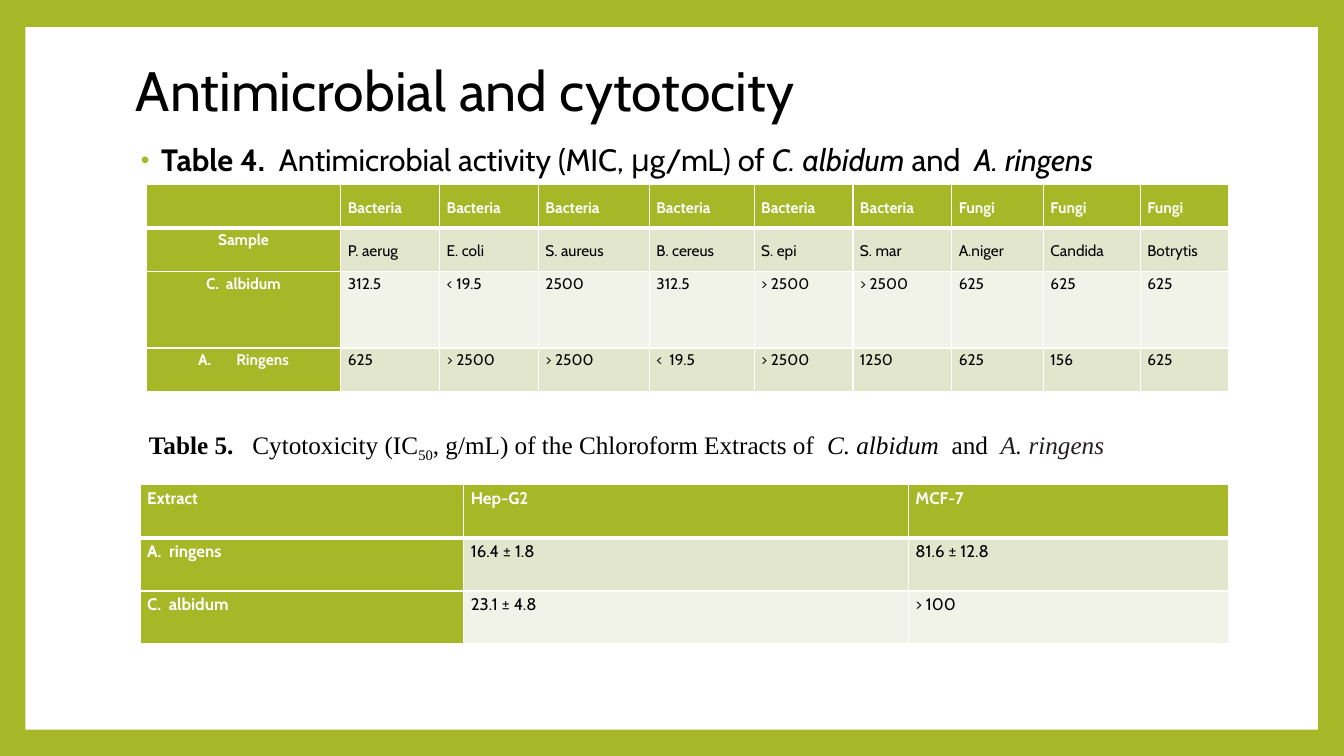
from dataclasses import dataclass

from lxml.etree import SubElement
from pptx import Presentation
from pptx.dml.color import RGBColor
from pptx.enum.shapes import MSO_SHAPE as Shape
from pptx.enum.text import MSO_ANCHOR as Anchor, PP_ALIGN as Align
from pptx.oxml import parse_xml
from pptx.oxml.ns import nsdecls, qn
from pptx.util import Inches, Pt

SLIDE_WIDTH, SLIDE_HEIGHT = Inches(13.33), Inches(7.5)


@dataclass(frozen=True)
class Theme:
    green: str = "A6B727"
    white: str = "FFFFFF"
    black: str = "000000"
    soft_black: str = "231F20"
    bands: tuple = ("E1E6CD", "F1F3E8")
    sans: str = "Cabin"
    serif: str = "Times New Roman"
    title: float = 39.6
    caption: float = 22
    serif_caption: float = 18
    activity: float = 11
    toxicity: float = 12
    thin: float = 1
    thick: float = 3


THEME = Theme()


def share_box(left, top, width, height):
    """Turn percentages of the slide into a box of lengths."""
    return (int(SLIDE_WIDTH * left / 100), int(SLIDE_HEIGHT * top / 100),
            int(SLIDE_WIDTH * width / 100), int(SLIDE_HEIGHT * height / 100))


def split(length, weights):
    return [int(length * weight / sum(weights)) for weight in weights]


def add_span(para, text, *, size, font=THEME.sans, color=THEME.black,
             bold=False, italic=False, baseline=0):
    span = para.add_run()
    span.text = text
    span.font.size, span.font.name = Pt(size), font
    span.font.bold, span.font.italic = bold, italic
    span.font.color.rgb = RGBColor.from_string(color)
    if baseline:
        span.font._element.set("baseline", str(baseline * 1000))


def set_bullet(para, indent, hanging, *marks):
    """Hang the paragraph and append its bullet marks, each a tag and a dict."""
    properties = para._p.get_or_add_pPr()
    properties.set("marL", str(Inches(indent)))
    properties.set("indent", str(-Inches(hanging)))
    return [SubElement(properties, qn(tag), values) for tag, values in marks]


def add_line(page, box, spans, *, line_spacing, anchor=Anchor.TOP, **formats):
    """Place one paragraph of (text, own formats) spans."""
    frame = page.shapes.add_textbox(*box).text_frame
    frame.word_wrap = True
    frame.vertical_anchor = anchor
    para = frame.paragraphs[0]
    para.line_spacing = line_spacing
    for text, own in spans:
        add_span(para, text, **(formats | own))
    return para


def set_borders(cell, top, bottom):
    properties = cell._tc.get_or_add_tcPr()
    widths = {"lnL": THEME.thin, "lnR": THEME.thin, "lnT": top, "lnB": bottom}
    for index, (side, width) in enumerate(widths.items()):
        properties.insert(index, parse_xml(
            f'<a:{side} {nsdecls("a")} w="{Pt(width)}"><a:solidFill>'
            f'<a:srgbClr val="{THEME.white}"/></a:solidFill></a:{side}>'))


def add_banded_table(page, box, rows, *, columns, heights, size,
                     align=Align.LEFT, first_align=Align.LEFT, middle_rows=0):
    """Green header row and first column, banded cells elsewhere."""
    table = page.shapes.add_table(len(rows), len(columns), *box).table
    for column, width in zip(table.columns, split(box[2], columns)):
        column.width = width
    for row, height in zip(table.rows, split(box[3], heights)):
        row.height = height
    for r, texts in enumerate(rows):
        for c, text in enumerate(texts):
            cell = table.cell(r, c)
            heading = r == 0 or c == 0
            set_borders(cell, THEME.thick if r == 1 else THEME.thin,
                        THEME.thick if r == 0 else THEME.thin)
            cell.fill.solid()
            cell.fill.fore_color.rgb = RGBColor.from_string(
                THEME.green if heading else THEME.bands[(r - 1) % 2])
            cell.margin_left = cell.margin_right = Inches(0.07)
            cell.margin_top = cell.margin_bottom = 0
            if c and r < middle_rows:
                cell.vertical_anchor = Anchor.MIDDLE
            para = cell.text_frame.paragraphs[0]
            para.alignment = align if c else first_align
            para.line_spacing = 1.15
            if text:
                add_span(para, text, size=size, bold=heading,
                         color=THEME.white if heading else THEME.black)
    return table


def add_panel(page, box):
    page.background.fill.solid()
    page.background.fill.fore_color.rgb = RGBColor.from_string(THEME.green)
    panel = page.shapes.add_shape(Shape.RECTANGLE, *box)
    panel.shadow.inherit = False
    panel.fill.solid()
    panel.fill.fore_color.rgb = RGBColor.from_string(THEME.white)
    panel.line.fill.background()


def add_activity_caption(page, box):
    para = add_line(page, box, [
        ("Table 4.  ", {"bold": True}),
        ("Antimicrobial activity (MIC, μg/mL) of ", {}),
        ("C. albidum", {"italic": True}),
        (" and  ", {}),
        ("A. ringens", {"italic": True}),
    ], size=THEME.caption, line_spacing=0.9)
    color, *_ = set_bullet(para, 0.25, 0.2, ("a:buClr", {}),
                           ("a:buSzPct", {"val": "80000"}),
                           ("a:buFont", {"typeface": "Arial"}),
                           ("a:buChar", {"char": "•"}))
    SubElement(color, qn("a:srgbClr"), {"val": THEME.green})


def add_activity_table(page, box):
    rows = [
        [""] + ["Bacteria"] * 6 + ["Fungi"] * 3,
        ["Sample", "P. aerug", "E. coli", "S. aureus", "B. cereus", "S. epi",
         "S. mar", "A.niger", "Candida", "Botrytis"],
        ["C.  albidum", "312.5", "< 19.5", "2500", "312.5", "> 2500",
         "> 2500", "625", "625", "625"],
        ["Ringens", "625", "> 2500", "> 2500", "<  19.5", "> 2500",
         "1250", "625", "156", "625"],
    ]
    table = add_banded_table(
        page, box, rows, size=THEME.activity, middle_rows=2,
        columns=[1.93, 0.98, 0.98, 1.1, 1.04, 0.98, 0.98, 0.91, 0.96, 0.88],
        heights=[0.43, 0.43, 0.76, 0.43],
        align=Align.JUSTIFY, first_align=Align.CENTER)
    set_bullet(table.cell(3, 0).text_frame.paragraphs[0], 0.38, 0.38,
               ("a:buAutoNum", {"type": "alphaUcPeriod"}))


def add_toxicity_caption(page, box):
    para = add_line(page, box, [
        ("Table 5.   ", {"bold": True}),
        ("Cytotoxicity (IC", {}),
        ("50", {"baseline": -25}),
        (", g/mL) of the Chloroform Extracts of  ", {}),
        ("C. albidum", {"italic": True}),
        ("  and  ", {}),
        ("A. ringens", {"italic": True, "color": THEME.soft_black}),
    ], size=THEME.serif_caption, font=THEME.serif, line_spacing=1.15)
    para.space_after = Pt(10)


def add_toxicity_table(page, box):
    rows = [["Extract", "Hep-G2", "MCF-7"],
            ["A.  ringens", "16.4 ± 1.8", "81.6 ± 12.8"],
            ["C.  albidum", "23.1 ± 4.8", "> 100"]]
    add_banded_table(page, box, rows, size=THEME.toxicity,
                     columns=[3.21, 4.41, 3.18], heights=[1, 1, 1])


def main():
    deck = Presentation()
    deck.slide_width, deck.slide_height = SLIDE_WIDTH, SLIDE_HEIGHT
    page = deck.slides.add_slide(deck.slide_layouts[6])
    add_panel(page, share_box(1.88, 3.6, 96.17, 92.93))
    add_line(page, share_box(9.38, 8.93, 81.02, 6.93),
             [("Antimicrobial and cytotocity", {})],
             size=THEME.title, line_spacing=0.9, anchor=Anchor.MIDDLE)
    add_activity_caption(page, share_box(9.38, 18.53, 81.02, 5.87))
    add_activity_table(page, share_box(10.88, 24.4, 80.57, 27.4))
    add_toxicity_caption(page, share_box(10.35, 55.47, 80.57, 6))
    add_toxicity_table(page, share_box(10.43, 64.13, 81.02, 21.07))
    deck.save("out.pptx")


if __name__ == "__main__":
    main()
